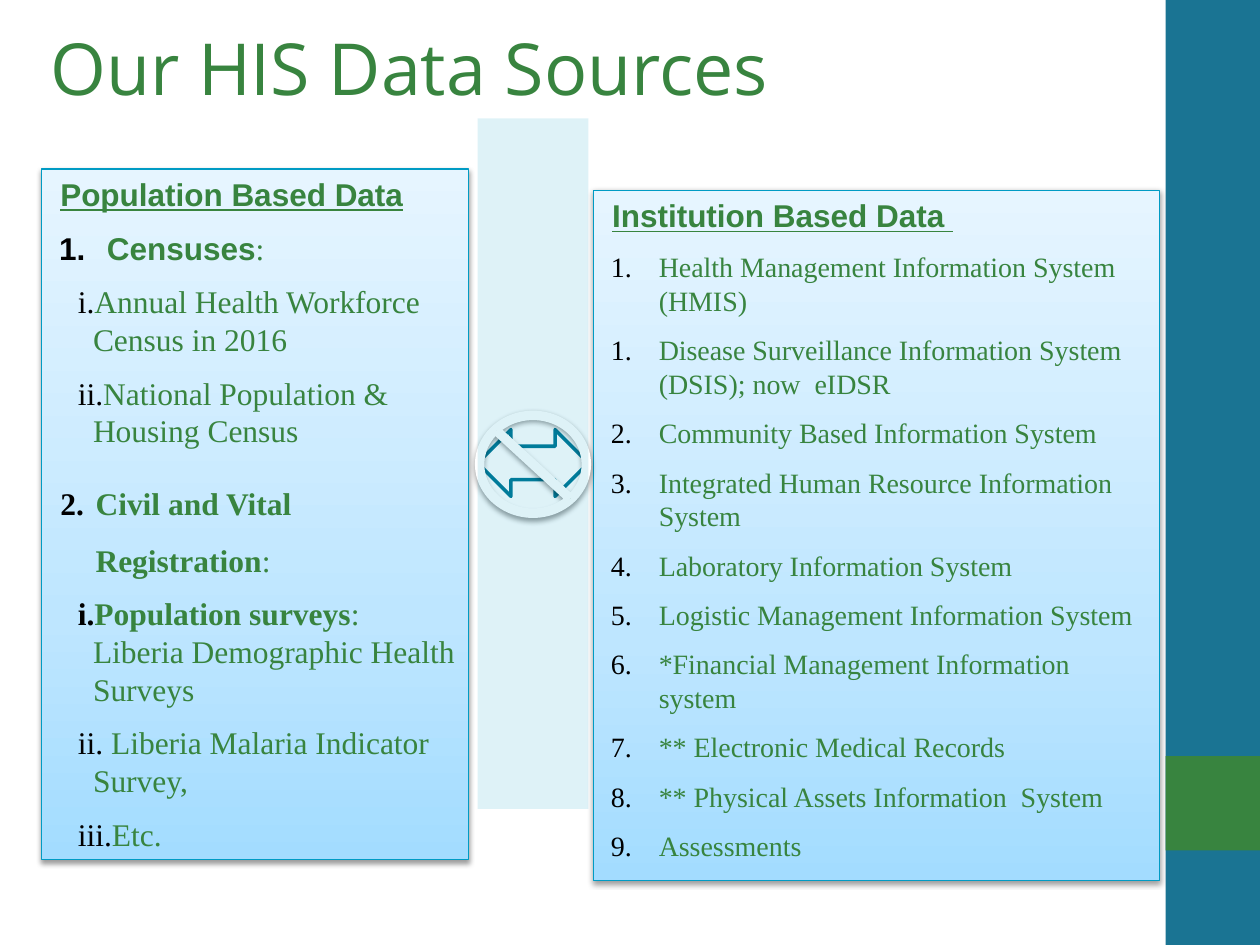
"""Build the slide on health data sources."""
from lxml import etree
from pptx import Presentation
from pptx import util as u
from pptx.dml.color import RGBColor
from pptx.enum import shapes, text
from pptx.oxml import ns

GREEN = RGBColor(0x38, 0x84, 0x3F)
TEAL = RGBColor(0x1A, 0x74, 0x93)
EDGE = RGBColor(0x00, 0x9B, 0xC4)
ARROW = RGBColor(0x00, 0x76, 0x94)
BAND = RGBColor(0x00, 0x9F, 0xC8)
WHITE = RGBColor(0xFF, 0xFF, 0xFF)
BLACK = RGBColor(0, 0, 0)
STOPS = [(0, "A3DCFF"), (35, "BEE6FF"), (100, "E6F5FF")]

SERIF, SANS = "Times New Roman", "Arial"
HEAD = dict(font=SANS, bold=True, line=True)
BOLD = dict(bold=True)
ARAB, ROMAN = "arabicPeriod", "romanLcPeriod"
WIDE, SLIM, DEEP = (0.42, -0.38), (0.33, -0.28), (0.31, -0.12)

RIGHT = [
    (2, (0.05, 0), None, 1, [("Institution Based Data\u00a0", HEAD)]),
    (1, WIDE, ARAB, 1, [("Health Management Information System (HMIS)", {})]),
] + [(2, WIDE, ARAB, 1, [(name, {})]) for name in (
    "Disease Surveillance Information System (DSIS); now  eIDSR",
    "Community Based Information System",
    "Integrated Human Resource Information System",
    "Laboratory Information System",
    "Logistic Management Information System",
    "*Financial Management Information system",
    "** Electronic Medical Records",
    "** Physical Assets Information  System",
    "Assessments",
)]
LEFT = [
    (2, (0.05, 0), None, 1, [("Population Based Data", HEAD)]),
    (2, WIDE, ARAB, 1, [("Censuses", dict(font=SANS, bold=True)), (":", {})]),
    (7, DEEP, ROMAN, 1, [("Annual Health Workforce Census in 2016", {})]),
    (7, DEEP, ROMAN, 1, [("National Population & Housing Census", {})]),
    (2, SLIM, ARAB, 1.5, [("Civil and Vital Registration", BOLD), (":", {})]),
    (3, DEEP, ROMAN, 1, [("Population surveys", BOLD),
                         (": Liberia Demographic Health Surveys", {})]),
    (3, DEEP, ROMAN, 1, [(" Liberia Malaria Indicator Survey,", {})]),
    (3, DEEP, ROMAN, 1, [("Etc.", {})]),
]
CARDS = [((4.71, 1.51, 4.49, 5.48), 16, RIGHT),
         ((0.33, 1.34, 3.39, 5.48), 18, LEFT)]


def write(par, words, size=18, font=SERIF, bold=False, line=False):
    run = par.add_run()
    run.text = words
    face = run.font
    face.size, face.name = u.Pt(size), font
    face.bold, face.underline = bold, line
    face.color.rgb = GREEN


def node(base, tag, **attrs):
    return etree.SubElement(base, ns.qn("a:" + tag),
                            {key: str(val) for key, val in attrs.items()})


def draw(slide, kind, spot, fill=None, edge=None, width=1):
    shape = slide.shapes.add_shape(kind, *map(u.Inches, spot))
    shape.shadow.inherit = False
    if fill is None:
        shape.fill.background()
    else:
        shape.fill.solid()
        shape.fill.fore_color.rgb = fill
    if edge is None:
        shape.line.fill.background()
    else:
        shape.line.color.rgb = edge
        shape.line.width = u.Pt(width)
    return shape


def shade(shape):
    glow = node(shape._element.spPr.find(ns.qn("a:effectLst")), "outerShdw",
                blurRad=u.Pt(3.1), dist=u.Pt(1.6), dir=90 * 60000, rotWithShape=0)
    node(node(glow, "srgbClr", val=BLACK), "alpha", val=38000)


def blend(shape):
    shape.fill.gradient()
    grad = shape._element.spPr.find(ns.qn("a:gradFill"))
    for child in list(grad):
        grad.remove(child)
    stops = node(grad, "gsLst")
    for pos, tone in STOPS:
        node(node(stops, "gs", pos=pos * 1000), "srgbClr", val=tone)
    node(grad, "lin", ang=270 * 60000, scaled=0)


def card(slide, spot, size, items):
    shape = draw(slide, shapes.MSO_SHAPE.RECTANGLE, spot, WHITE, EDGE, 0.75)
    blend(shape)
    shade(shape)
    frame = shape.text_frame
    frame.word_wrap = True
    frame.vertical_anchor = text.MSO_ANCHOR.TOP
    for i, (level, (left, hang), mark, gap, runs) in enumerate(items):
        par = frame.add_paragraph() if i else frame.paragraphs[0]
        par.level, par.alignment = level, text.PP_ALIGN.LEFT
        par.line_spacing, par.space_after = gap, u.Pt(9)
        props = par._p.get_or_add_pPr()
        props.set("marL", str(u.Inches(left)))
        props.set("indent", str(u.Inches(hang)))
        if mark:
            node(node(props, "buClr"), "srgbClr", val=BLACK)
            node(props, "buAutoNum", type=mark)
        for words, form in runs:
            write(par, words, **{"size": size if i else 18, **form})


def main():
    deck = Presentation()
    deck.slide_width, deck.slide_height = u.Inches(10), u.Inches(7.5)
    slide = deck.slides.add_slide(deck.slide_layouts[5])
    kinds = shapes.MSO_SHAPE
    draw(slide, kinds.RECTANGLE, (9.25, 0, 0.75, 7.5), TEAL)
    draw(slide, kinds.RECTANGLE, (9.25, 6, 0.75, 0.75), GREEN)

    title = slide.shapes.title
    title.left, title.top, title.width, title.height = map(
        u.Inches, (0.33, 0.16, 9.18, 0.83))
    frame = title.text_frame
    frame.word_wrap = True
    frame.auto_size = text.MSO_AUTO_SIZE.NONE
    frame.vertical_anchor = text.MSO_ANCHOR.MIDDLE
    frame.margin_left = frame.margin_right = u.Inches(0.07)
    frame.margin_top = frame.margin_bottom = u.Inches(0.04)
    par = frame.paragraphs[0]
    par.alignment, par.line_spacing = text.PP_ALIGN.LEFT, 0.9
    write(par, "Our HIS Data Sources", size=41, font="Open Sans")

    for spot, size, items in CARDS:
        card(slide, spot, size, items)

    draw(slide, kinds.LEFT_RIGHT_ARROW, (3.79, 3.41, 0.88, 0.53), None, ARROW, 2)
    ban = draw(slide, kinds.NO_SYMBOL, (3.79, 3.28, 0.88, 0.81), GREEN, WHITE, 3)
    ban.adjustments[0] = 0.041
    shade(ban)
    band = draw(slide, kinds.RECTANGLE, (3.79, 0.94, 0.88, 5.48), BAND)
    tint = band._element.spPr.find(ns.qn("a:solidFill"))
    node(tint[0], "alpha", val=13000)
    deck.save("out.pptx")


if __name__ == "__main__":
    main()
